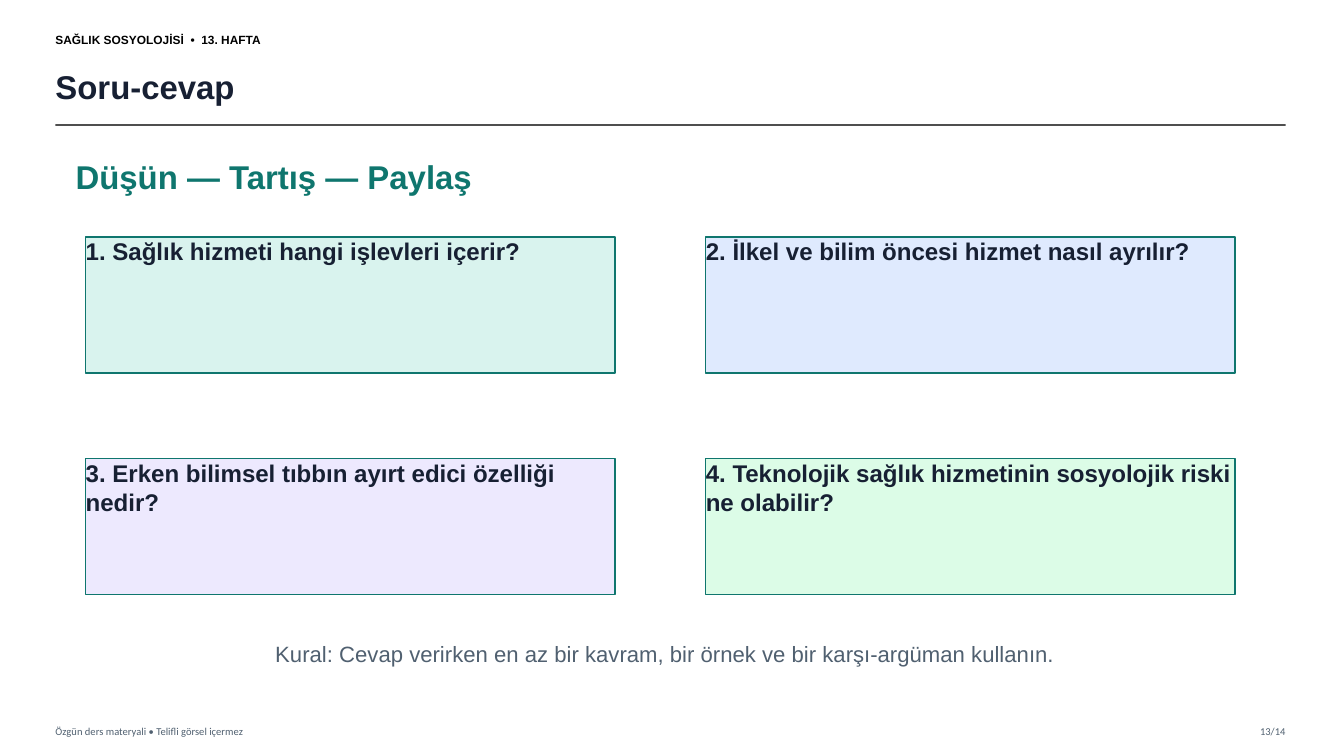
from lxml import etree
from pptx import Presentation
from pptx.dml.color import RGBColor
from pptx.enum.shapes import MSO_CONNECTOR, MSO_SHAPE
from pptx.enum.text import MSO_ANCHOR, PP_ALIGN
from pptx.oxml.ns import qn
from pptx.util import Inches, Pt

RECTANGLE = MSO_SHAPE.RECTANGLE
STRAIGHT = MSO_CONNECTOR.STRAIGHT
TOP, MIDDLE = MSO_ANCHOR.TOP, MSO_ANCHOR.MIDDLE
LEFT, CENTER, RIGHT = PP_ALIGN.LEFT, PP_ALIGN.CENTER, PP_ALIGN.RIGHT

COLORS = {
    "black": "000000",
    "ink": "172033",
    "muted": "506070",
    "teal": "0F766E",
    "rule": "333333",
    "mint": "D9F3EE",
    "blue": "DFEAFE",
    "lilac": "EDE9FE",
    "green": "DCFCE7",
}
COLUMNS, ROWS = 133.3, 75
SLIDE_WIDTH, SLIDE_HEIGHT = Inches(13.33), Inches(7.5)
MARGIN, RIGHT_EDGE = 5.5, 127.5
FOOTER_ROW, FOOTER_HEIGHT = 71.4, 2.2
CARD_LEFT, CARD_TOP = 8.5, 23.5
CARD_WIDTH, CARD_HEIGHT = 52.5, 13.5
CARD_COLUMN_STEP, CARD_ROW_STEP = 61.5, 22

QUESTIONS = [
    ("1. Sağlık hizmeti hangi işlevleri içerir?", "mint"),
    ("2. İlkel ve bilim öncesi hizmet nasıl ayrılır?", "blue"),
    ("3. Erken bilimsel tıbbın ayırt edici özelliği nedir?", "lilac"),
    ("4. Teknolojik sağlık hizmetinin sosyolojik riski ne olabilir?", "green"),
]


def across(columns):
    return round(SLIDE_WIDTH * columns / COLUMNS)


def down(rows):
    return round(SLIDE_HEIGHT * rows / ROWS)


def place(column, row, width, height):
    return across(column), down(row), across(width), down(height)


def color(name):
    return RGBColor.from_string(COLORS[name])


def write(frame, text, *, size, ink, font="Arial", bold=False, align=LEFT, anchor=TOP):
    frame.word_wrap = True
    frame.vertical_anchor = anchor
    frame.margin_left = frame.margin_right = 0
    frame.margin_top = frame.margin_bottom = 0
    paragraph = frame.paragraphs[0]
    paragraph.alignment = align
    run = paragraph.add_run()
    run.text = text
    run.font.name = font
    run.font.size = Pt(size)
    run.font.bold = bold
    run.font.color.rgb = color(ink)


def add_label(slide, area, text, **style):
    label = slide.shapes.add_textbox(*place(*area))
    write(label.text_frame, text, **style)


def add_question(slide, index, text, fill):
    row, column = divmod(index, 2)
    card = slide.shapes.add_shape(RECTANGLE, *place(
        CARD_LEFT + column * CARD_COLUMN_STEP,
        CARD_TOP + row * CARD_ROW_STEP,
        CARD_WIDTH, CARD_HEIGHT))
    card.shadow.inherit = False
    card.fill.solid()
    card.fill.fore_color.rgb = color(fill)
    card.line.color.rgb = color("teal")
    card.line.width = Pt(1)
    write(card.text_frame, text, size=17.2, ink="ink", bold=True)


def add_title_rule(slide, row, opacity):
    rule = slide.shapes.add_connector(
        STRAIGHT, across(MARGIN), down(row), across(RIGHT_EDGE), down(row))
    rule.line.color.rgb = color("rule")
    rule.line.width = Pt(1.2)
    properties = rule.element.spPr
    shade = properties.find(".//" + qn("a:srgbClr"))
    etree.SubElement(shade, qn("a:alpha")).set("val", str(opacity * 1000))
    etree.SubElement(properties, qn("a:effectLst"))


def add_header(slide):
    add_label(slide, (MARGIN, 2.5, 36, 2.8), "SAĞLIK SOSYOLOJİSİ  •  13. HAFTA",
              size=8.5, ink="black", bold=True, anchor=MIDDLE)
    add_label(slide, (MARGIN, 5.8, 119.5, 5.5), "Soru-cevap",
              size=23.5, ink="ink", bold=True, anchor=MIDDLE)
    add_title_rule(slide, 12.4, opacity=85)


def add_footer(slide):
    footer_style = dict(size=7.5, ink="muted", font="Calibri", anchor=MIDDLE)
    add_label(slide, (MARGIN, FOOTER_ROW, 60, FOOTER_HEIGHT),
              "Özgün ders materyali • Telifli görsel içermez", **footer_style)
    add_label(slide, (RIGHT_EDGE - 6.5, FOOTER_ROW, 6.5, FOOTER_HEIGHT),
              "13/14", align=RIGHT, **footer_style)


def main():
    deck = Presentation()
    deck.slide_width, deck.slide_height = SLIDE_WIDTH, SLIDE_HEIGHT
    slide = deck.slides.add_slide(deck.slide_layouts[6])
    add_header(slide)
    add_footer(slide)
    add_label(slide, (7.5, 15.5, 57, 5), "Düşün — Tartış — Paylaş",
              size=23.5, ink="teal", bold=True)
    for index, (question, fill) in enumerate(QUESTIONS):
        add_question(slide, index, question, fill)
    add_label(slide, (10, 63.5, 112, 3.5),
              "Kural: Cevap verirken en az bir kavram, bir örnek ve bir karşı-argüman kullanın.",
              size=15.8, ink="muted", align=CENTER)
    deck.save("out.pptx")


if __name__ == "__main__":
    main()
